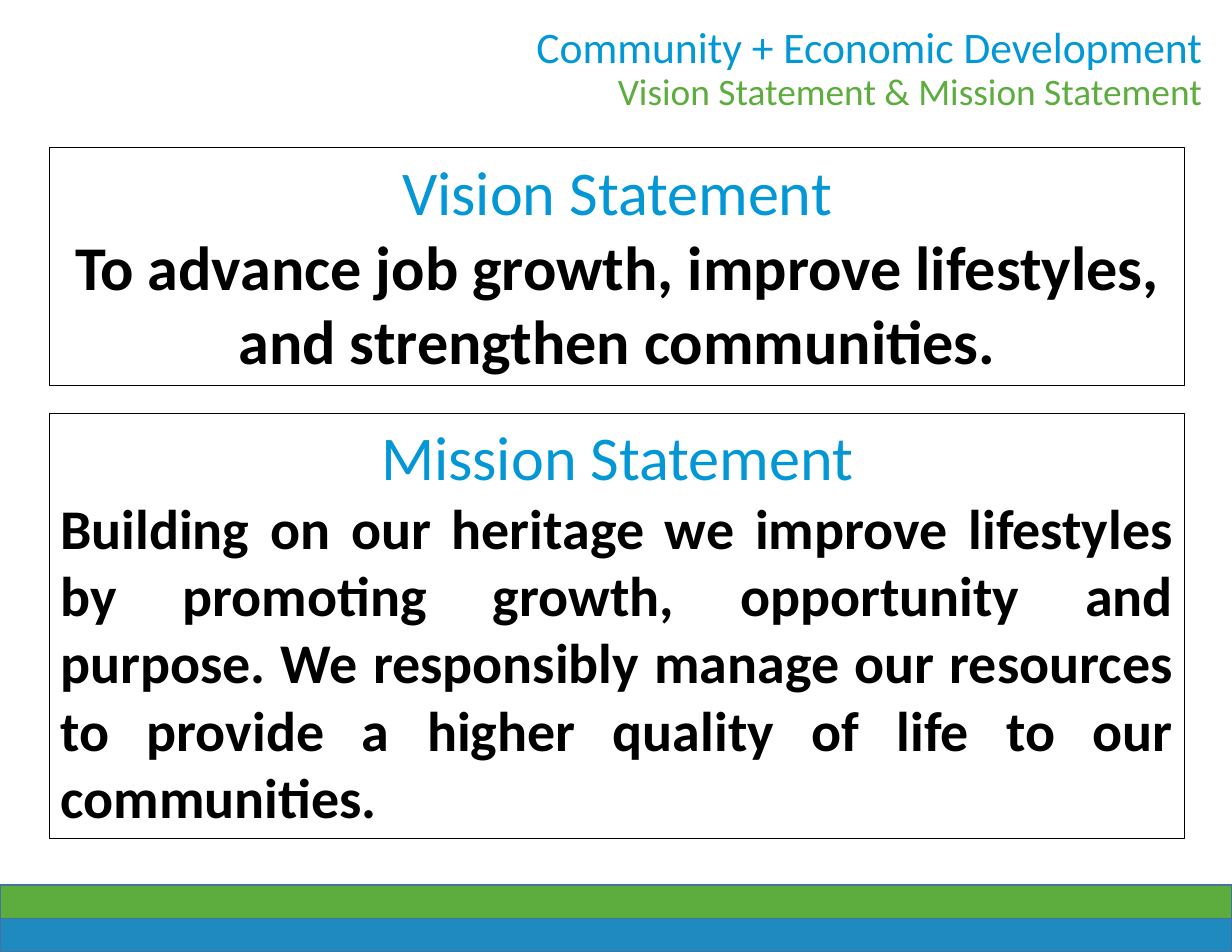
"""Build the vision and mission statement slide."""
from dataclasses import dataclass

from pptx import Presentation
from pptx.dml.color import RGBColor
from pptx.enum.shapes import MSO_SHAPE
from pptx.enum.text import MSO_ANCHOR, PP_ALIGN
from pptx.util import Inches, Pt

FONT = "Calibri"
COLORS = {
    "blue": "0397D6",
    "green": "5DAD3E",
    "band": "1F8AC0",
    "edge": "43739E",
    "black": "000000",
}


@dataclass
class Line:
    text: str
    size: float
    color: str
    align: PP_ALIGN
    bold: bool = False


@dataclass
class Box:
    left: float
    top: float
    width: float
    height: float
    lines: tuple[Line, ...] = ()
    fill: str | None = None
    edge: str | None = None
    edge_width: float = 0.75


BOXES = (
    Box(0, 7.91, 11, 0.59, fill="band", edge="edge", edge_width=1),
    Box(0, 7.9, 11, 0.3, fill="green", edge="edge", edge_width=1),
    Box(3.47, 0.13, 7.36, 0.57, (
        Line("Community + Economic Development", 28, "blue", PP_ALIGN.RIGHT),
    )),
    Box(2.24, 0.56, 8.59, 0.5, (
        Line("Vision Statement & Mission Statement", 24, "green", PP_ALIGN.RIGHT),
    )),
    Box(0.44, 1.32, 10.14, 2.12, (
        Line("Vision Statement", 40, "blue", PP_ALIGN.CENTER),
        Line("To advance job growth, improve lifestyles, and strengthen communities.",
             40, "black", PP_ALIGN.CENTER, True),
    ), edge="black"),
    Box(0.44, 3.69, 10.14, 3.8, (
        Line("Mission Statement", 40, "blue", PP_ALIGN.CENTER),
        Line("Building on our heritage we improve lifestyles by promoting growth, "
             "opportunity and purpose. We responsibly manage our resources to provide "
             "a higher quality of life to our communities.",
             36, "black", PP_ALIGN.JUSTIFY, True),
    ), edge="black"),
)


def rgb(name: str) -> RGBColor:
    """Return a named palette colour."""
    return RGBColor.from_string(COLORS[name])


def add_lines(tf, lines: tuple[Line, ...]) -> None:
    """Write and format one paragraph per line."""
    tf.word_wrap = True
    tf.vertical_anchor = MSO_ANCHOR.TOP
    tf.text = "\n".join(line.text for line in lines)
    for p, line in zip(tf.paragraphs, lines):
        p.alignment = line.align
        for r in p.runs:
            r.font.name = FONT
            r.font.size = Pt(line.size)
            r.font.bold = line.bold
            r.font.color.rgb = rgb(line.color)


def add_box(s, box: Box) -> None:
    """Draw a text box, or a rectangle when it has an edge."""
    at = [Inches(v) for v in (box.left, box.top, box.width, box.height)]
    if box.edge:
        sp = s.shapes.add_shape(MSO_SHAPE.RECTANGLE, *at)
        sp.shadow.inherit = False
        sp.line.color.rgb = rgb(box.edge)
        sp.line.width = Pt(box.edge_width)
    else:
        sp = s.shapes.add_textbox(*at)
    if box.fill:
        sp.fill.solid()
        sp.fill.fore_color.rgb = rgb(box.fill)
    else:
        sp.fill.background()
    if box.lines:
        add_lines(sp.text_frame, box.lines)


def main() -> None:
    """Create and save the presentation."""
    prs = Presentation()
    prs.slide_width, prs.slide_height = Inches(11), Inches(8.5)
    s = prs.slides.add_slide(prs.slide_layouts[6])
    for box in BOXES:
        add_box(s, box)
    prs.save("out.pptx")


if __name__ == "__main__":
    main()
